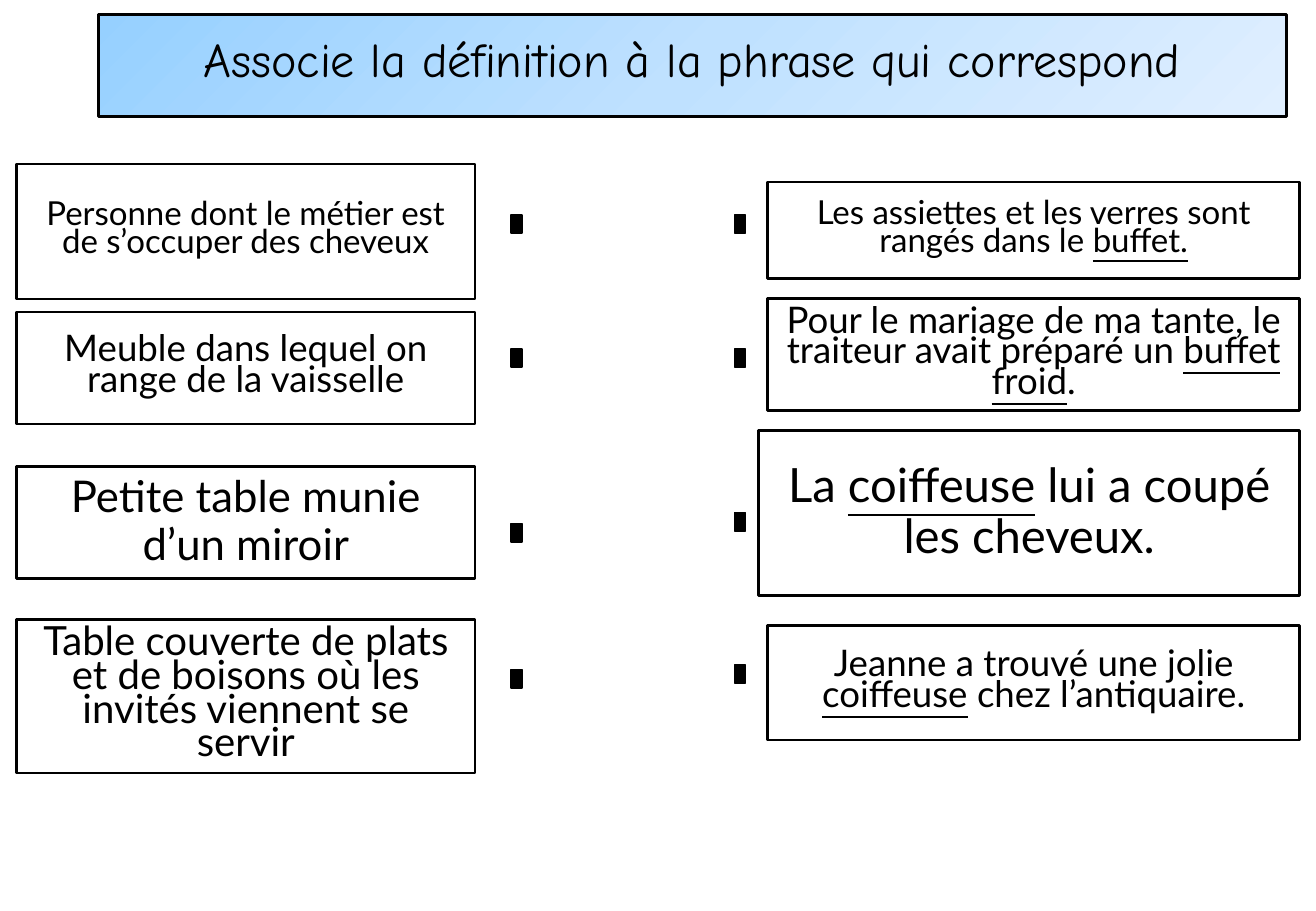
"""Build a French matching exercise: definitions on the left, sentences on the right."""
from copy import deepcopy

from pptx import Presentation
from pptx.dml.color import RGBColor
from pptx.enum.shapes import MSO_SHAPE
from pptx.enum.text import MSO_ANCHOR, PP_ALIGN
from pptx.oxml.ns import qn
from pptx.util import Pt

RECTANGLE = MSO_SHAPE.RECTANGLE
MIDDLE = MSO_ANCHOR.MIDDLE
CENTER = PP_ALIGN.CENTER

COLORS = {
    "ink": "000000",
    "banner_start": "96D0FF",
    "banner_middle": "BFE1FF",
    "banner_end": "E0EFFF",
}
INK = RGBColor.from_string(COLORS["ink"])


def add_box(slide, left, top, width, height, line_width):
    """Add an unfilled, outlined rectangle."""
    shape = slide.shapes.add_shape(RECTANGLE, Pt(left), Pt(top), Pt(width), Pt(height))
    shape.shadow.inherit = False
    shape.fill.background()
    shape.line.color.rgb = INK
    shape.line.width = Pt(line_width)
    return shape


def write_text(shape, pieces, font_name, size, line_spacing, space_before):
    """Write centred text, underlining every second piece."""
    text_frame = shape.text_frame
    text_frame.word_wrap = True
    text_frame.vertical_anchor = MIDDLE
    paragraph = text_frame.paragraphs[0]
    paragraph.alignment = CENTER
    paragraph.line_spacing = line_spacing
    paragraph.space_before = Pt(space_before)
    for index, piece in enumerate(pieces):
        run = paragraph.add_run()
        run.text = piece
        run.font.name = font_name
        run.font.size = Pt(size)
        run.font.color.rgb = INK
        run.font.underline = index % 2 == 1


presentation = Presentation()
presentation.slide_width = Pt(780)
presentation.slide_height = Pt(540)
slide = presentation.slides.add_slide(presentation.slide_layouts[6])

banner = add_box(slide, 58.3, 8.6, 704.2, 60.5, 1.5)
banner.fill.gradient()
banner.fill.gradient_angle = 315
stop_list = banner.element.find(".//" + qn("a:gsLst"))
stop_list.insert(1, deepcopy(stop_list[0]))
banner_colors = ("banner_start", "banner_middle", "banner_end")
for index, (stop, name) in enumerate(zip(banner.fill.gradient_stops, banner_colors)):
    stop.position = index / 2
    stop.color.rgb = RGBColor.from_string(COLORS[name])
write_text(banner, ["Associe la définition à la phrase qui correspond"], "Comic Neue", 28.5, 0.7, 0)

definitions = [
    (97.2, 80, 19.6, 0.7, ["Personne dont le métier est de s’occuper des cheveux"]),
    (185, 66.4, 21.7, 0.7, ["Meuble dans lequel on range de la vaisselle"]),
    (276.5, 66.4, 25.9, 0.9, ["Petite table munie d’un miroir"]),
    (367.2, 91, 23.8, 0.7,
     ["Table couverte de plats et de boisons où les invités viennent se servir"]),
]
sentences = [
    (107.8, 57.4, 19.6, 0.7,
     ["Les assiettes et les verres sont rangés dans le ", "buffet."]),
    (177, 66.4, 21.7, 0.7,
     ["Pour le mariage de ma tante, le traiteur avait préparé un ", "buffet froid", "."]),
    (255.3, 97.8, 28, 0.9, ["La ", "coiffeuse", " lui a coupé les cheveux."]),
    (370.8, 68, 21.7, 0.7,
     ["Jeanne a trouvé une jolie ", "coiffeuse", " chez l’antiquaire."]),
]
RIGHT_EDGE = 770.4
left_boxes = [(9.8, 271.7)] * 4
right_boxes = [(455, RIGHT_EDGE - 455)] * 4
right_boxes[2] = (449.6, RIGHT_EDGE - 449.6)

columns = [(definitions, left_boxes), (sentences, right_boxes)]
for cards, boxes in columns:
    for (top, height, size, line_spacing, pieces), (left, width) in zip(cards, boxes):
        card = add_box(slide, left, top, width, height, 1.5)
        write_text(card, pieces, "Lato", size, line_spacing, 10)

marker_columns = [
    (302.9, (127.4, 206.9, 310.3, 396.9)),
    (435.4, (127.4, 206.9, 303.8, 394)),
]
for left, tops in marker_columns:
    for top in tops:
        marker = add_box(slide, left, top, 6.5, 10.8, 1)
        marker.fill.solid()
        marker.fill.fore_color.rgb = INK

presentation.save("out.pptx")
